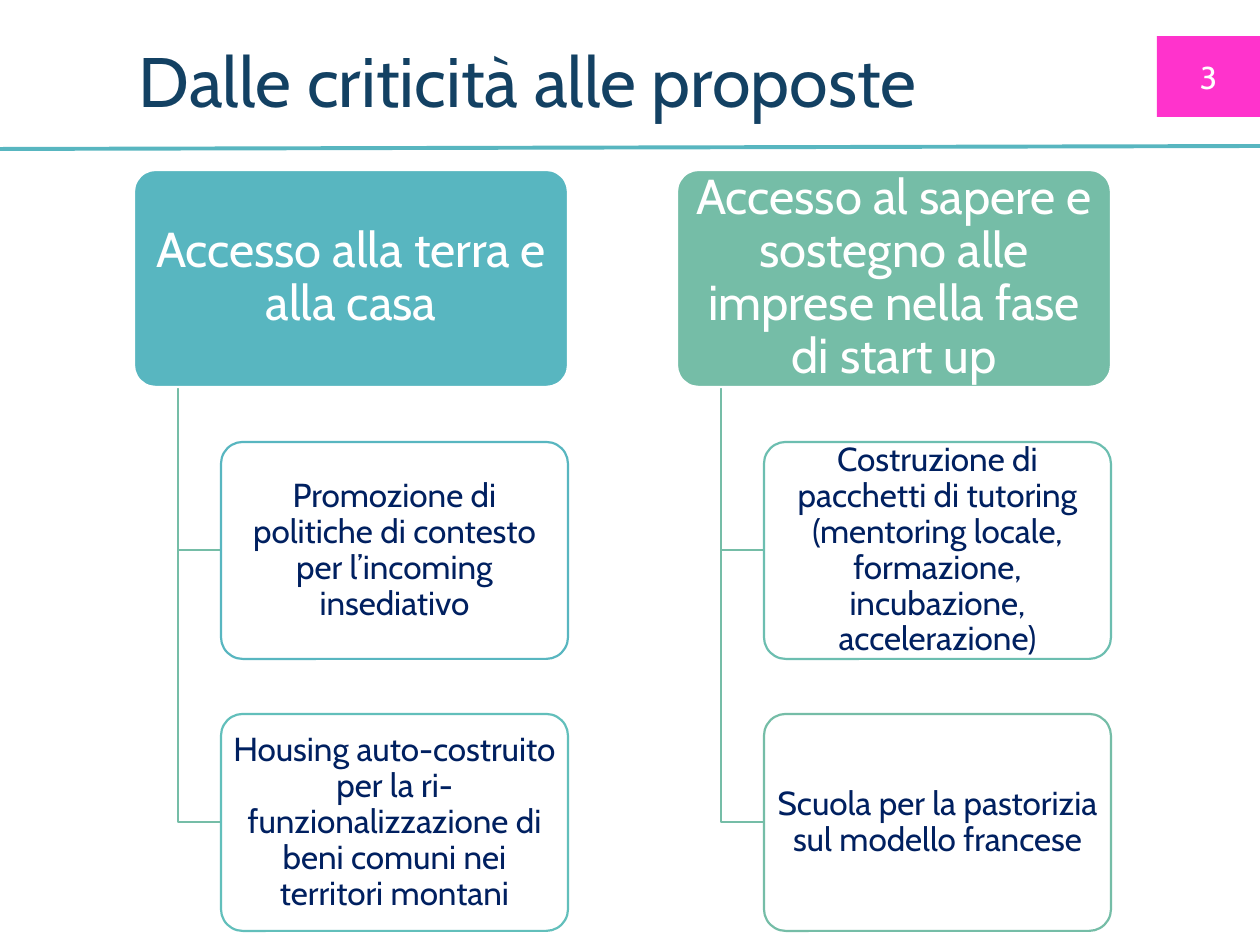
from lxml.etree import SubElement
from pptx import Presentation
from pptx.dml.color import RGBColor
from pptx.enum.shapes import MSO_CONNECTOR, MSO_SHAPE
from pptx.enum.text import MSO_ANCHOR, PP_ALIGN
from pptx.oxml.ns import qn
from pptx.util import Emu, Pt

EMU_PER_PX = 914400 / 126
COLORS = {
    "teal": "58B6C0", "aqua": "62BFBB", "mint": "6CBEB0", "green": "75BDA7",
    "pink": "FF33CC", "white": "FFFFFF", "heading": "134163", "navy": "002060",
}


def px(*lengths):
    return [Emu(round(length * EMU_PER_PX)) for length in lengths]


def write(holder, wording, size, color, margins, align, spacing, anchor):
    frame = holder.text_frame
    sides = ("margin_left", "margin_top", "margin_right", "margin_bottom")
    frame_format = dict(zip(sides, px(*margins)), word_wrap=True, vertical_anchor=anchor)
    for key, value in frame_format.items():
        setattr(frame, key, value)
    paragraph = frame.paragraphs[0]
    for key, value in {"alignment": align, "line_spacing": spacing}.items():
        setattr(paragraph, key, value)
    run = paragraph.add_run()
    run.text = wording
    for key, value in {"name": "Cabin", "size": Pt(size)}.items():
        setattr(run.font, key, value)
    run.font.color.rgb = RGBColor.from_string(COLORS[color])


presentation = Presentation()
presentation.slide_width, presentation.slide_height = px(1260, 945)
slide = presentation.slides.add_slide(presentation.slide_layouts[6])
shapes = slide.shapes

divider = shapes.add_connector(MSO_CONNECTOR.STRAIGHT, *px(0, 149, 1260, 146))
divider.line.color.rgb = RGBColor.from_string(COLORS["teal"])
divider.line.width = Pt(2.25)
SubElement(divider._element.spPr, qn("a:effectLst"))

title = shapes.add_textbox(*px(126, 32, 992, 97))
write(title, "Dalle criticità alle proposte", 40, "heading",
      (13, 6, 13, 6), PP_ALIGN.LEFT, 1.0, MSO_ANCHOR.TOP)

page_number = shapes.add_shape(MSO_SHAPE.RECTANGLE, *px(1157, 36, 103, 81))
page_number.shadow.inherit = False
page_number.fill.solid()
page_number.fill.fore_color.rgb = RGBColor.from_string(COLORS["pink"])
page_number.line.fill.background()
write(page_number, "3", 18, "white", (13, 6, 13, 6), PP_ALIGN.CENTER, 1.0, MSO_ANCHOR.MIDDLE)

themes = [
    ("Accesso alla terra e alla casa", "teal", [
        ("Promozione di politiche di contesto per l’incoming insediativo", "teal"),
        ("Housing auto-costruito per la ri-funzionalizzazione di beni comuni "
         "nei territori montani", "aqua"),
    ]),
    ("Accesso al sapere e sostegno alle imprese nella fase di start up", "green", [
        ("Costruzione di pacchetti di tutoring (mentoring locale, formazione, "
         "incubazione, accelerazione)", "mint"),
        ("Scuola per la pastorizia sul modello francese", "green"),
    ]),
]
left, top, theme_width, box_height = 134, 170, 434, 217
column_step, row_step = 543, 272
trunk_offset, proposal_offset, proposal_width = 44, 87, 347

for column, (theme, theme_color, proposals) in enumerate(themes):
    x = left + column * column_step
    boxes = [(theme, x, top, theme_width, theme_color, "white", 28, "white", (8, 5, 8, 5))]
    for row, (proposal, outline) in enumerate(proposals, 1):
        y = top + row * row_step
        boxes.append((proposal, x + proposal_offset, y, proposal_width,
                      "white", outline, 19, "navy", (5, 4, 5, 4)))
        trunk, middle = x + trunk_offset, y + box_height / 2
        builder = shapes.build_freeform(trunk, top + box_height, scale=EMU_PER_PX)
        builder.add_line_segments([(trunk, middle), (x + proposal_offset, middle)], close=False)
        branch = builder.convert_to_shape()
        branch.shadow.inherit = False
        branch.fill.background()
        branch.line.color.rgb = RGBColor.from_string(COLORS["green"])
        branch.line.width = Pt(1.25)

    for wording, box_x, box_y, width, fill, outline, size, color, margins in boxes:
        box = shapes.add_shape(MSO_SHAPE.ROUNDED_RECTANGLE, *px(box_x, box_y, width, box_height))
        box.adjustments[0] = 0.1
        box.shadow.inherit = False
        box.fill.solid()
        box.fill.fore_color.rgb = RGBColor.from_string(COLORS[fill])
        if fill == "white":
            fill_color = box._element.spPr.find(qn("a:solidFill"))[0]
            SubElement(fill_color, qn("a:alpha"), val="90000")
        box.line.color.rgb = RGBColor.from_string(COLORS[outline])
        box.line.width = Pt(1.25)
        write(box, wording, size, color, margins, PP_ALIGN.CENTER, 0.9, MSO_ANCHOR.MIDDLE)

presentation.save("out.pptx")
